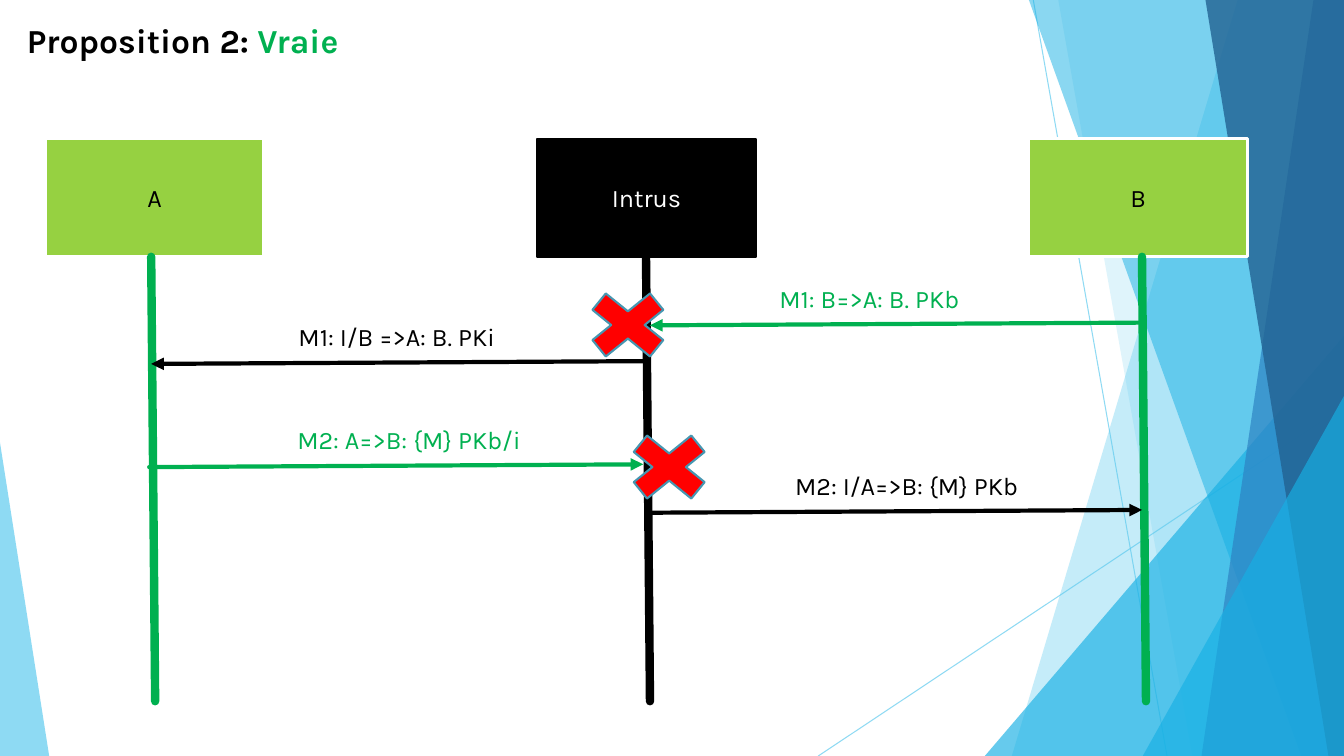
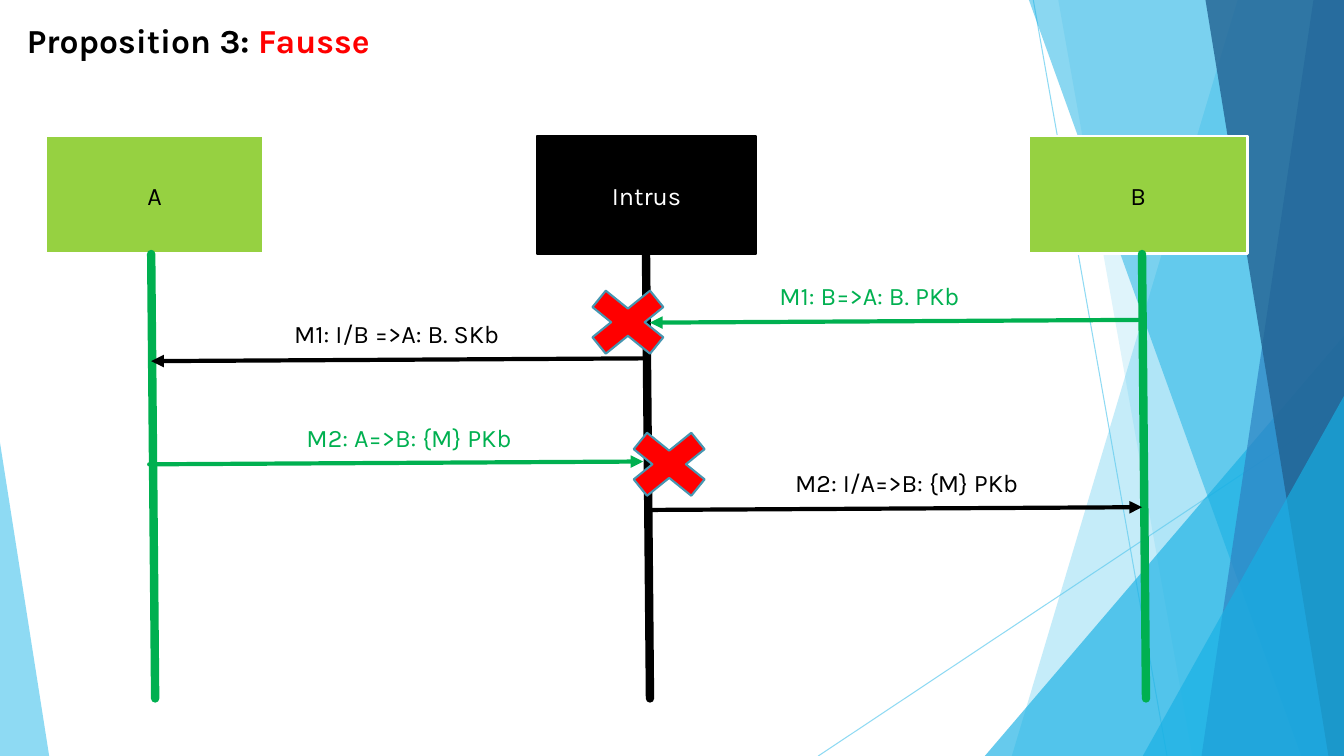
from lxml import etree
from pptx import Presentation
from pptx.dml.color import RGBColor
from pptx.enum.shapes import MSO_CONNECTOR, MSO_SHAPE
from pptx.enum.text import MSO_ANCHOR, PP_ALIGN
from pptx.oxml.ns import qn
from pptx.util import Cm, Pt

STRAIGHT = MSO_CONNECTOR.STRAIGHT
RECTANGLE, TRIANGLE, CROSS = MSO_SHAPE.RECTANGLE, MSO_SHAPE.ISOSCELES_TRIANGLE, MSO_SHAPE.MATH_MULTIPLY
MIDDLE, CENTER = MSO_ANCHOR.MIDDLE, PP_ALIGN.CENTER

FONT = "Karla"
COLORS = {
    "black": "000000", "white": "FFFFFF", "lime": "96D141", "green": "00B050",
    "red": "FF0000", "teal": "4696B1", "sky": "5FCBEF", "cyan": "17B0E4",
    "blue": "2E83C3", "navy": "226292",
}

# Content: verdict, top of the diagram and the four message labels
SLIDES = [
    {"title": "Proposition 2: ", "verdict": ("Vraie", "green"), "top": 3.5,
     "labels": ["M1: B=>A: B. PKb", "M1: I/B =>A: B. PKi",
                "M2: A=>B: {M} PKb/i", "M2: I/A=>B: {M} PKb"]},
    {"title": "Proposition 3: ", "verdict": ("Fausse", "red"), "top": 3.43,
     "labels": ["M1: B=>A: B. PKb", "M1: I/B =>A: B. SKb",
                "M2: A=>B: {M} PKb", "M2: I/A=>B: {M} PKb"]},
]

# Name, box left, lifeline x, box fill, text, border, border width, lifeline colour
ACTORS = [
    ("A", 1.14, 3.81, "lime", "black", "white", 2, "green"),
    ("B", 25.93, 28.78, "lime", "black", "white", 2, "green"),
    ("Intrus", 13.54, 16.28, "black", "white", "black", 1.5, "black"),
]

# Colour, left end (x, y below top), points left?, label centre, cross (x, y below top)
MESSAGES = [
    ("green", 16.38, 4.70, True, 21.91, (14.43, 3.56)),
    ("black", 3.81, 5.67, True, 10.0, None),
    ("green", 3.76, 8.27, False, 10.31, (15.47, 7.14)),
    ("black", 16.33, 9.42, False, 22.85, None),
]

# Sizes in centimetres
WIDTH, HEIGHT = 33.87, 19.05
BOX_W, BOX_H = 5.51, 2.97
LIFE_H, LIFE_LEAN = 11.2, 0.1
ARROW_W, ARROW_RISE = 12.45, 0.07
LABEL_W, LABEL_H, LABEL_LIFT = 7.24, 1.37, 1.37
CROSS_W, CROSS_H = 2.79, 2.26

# Backdrop, from back to front
RAYS = [(26.04, 0, 29.41, HEIGHT), (WIDTH, 10.24, 20.62, HEIGHT)]
FACETS = [  # bands: top x, bottom x; triangles: left, top, width, apex
    ("band", (31.19, 25.5), "sky", 36),
    ("band", (26.67, 30.05), "sky", 20),
    ("triangle", (24.82, 8.46, 9.05, 1), "cyan", 66),
    ("band", (25.93, 32.79), "cyan", 50),
    ("band", (33.1, 30.28), "blue", 70),
    ("band", (30.38, 33.48), "navy", 80),
    ("triangle", (28.8, 9.98, 5.07, 1), "cyan", 66),
    ("triangle", (0, 11.15, 1.24, 0), "sky", 70),
]


def rgb(name):
    return RGBColor.from_string(COLORS[name])


def set_opacity(shape, percent):
    for color in shape.element.iter(qn("a:srgbClr")):
        etree.SubElement(color, qn("a:alpha"), val=str(percent * 1000))


def style_shape(shape, fill, border=None, width=0):
    shape.shadow.inherit = False
    shape.fill.solid()
    shape.fill.fore_color.rgb = rgb(fill)
    if border:
        shape.line.color.rgb = rgb(border)
        shape.line.width = Pt(width)
    else:
        shape.line.fill.background()


def add_preset(page, kind, left, top, width, height, *style):
    shape = page.shapes.add_shape(kind, Cm(left), Cm(top), Cm(width), Cm(height))
    style_shape(shape, *style)
    return shape


def add_line(page, x1, y1, x2, y2, color, width, arrow=False):
    line = page.shapes.add_connector(STRAIGHT, Cm(x1), Cm(y1), Cm(x2), Cm(y2))
    line.line.color.rgb = rgb(color)
    line.line.width = Pt(width)
    outline = line.element.spPr.find(qn("a:ln"))
    outline.set("cap", "rnd")
    if arrow:
        etree.SubElement(outline, qn("a:tailEnd"), type="triangle")
    etree.SubElement(line.element.spPr, qn("a:effectLst"))
    return line


def write_centered(box, text, color):
    frame = box.text_frame
    frame.word_wrap = True
    frame.vertical_anchor = MIDDLE
    para = frame.paragraphs[0]
    para.text = text
    para.alignment = CENTER
    para.font.name, para.font.size = FONT, Pt(18)
    para.font.color.rgb = rgb(color)


def add_backdrop(page):
    for ray in RAYS:
        set_opacity(add_line(page, *ray, "sky", 0.75), 70)
    for kind, place, color, opacity in FACETS:
        if kind == "band":
            top_x, bottom_x = place
            outline = page.shapes.build_freeform(Cm(top_x), 0)
            outline.add_line_segments([(Cm(WIDTH), 0), (Cm(WIDTH), Cm(HEIGHT)),
                                       (Cm(bottom_x), Cm(HEIGHT))])
            facet = outline.convert_to_shape()
            style_shape(facet, color)
        else:
            left, top, width, apex = place
            facet = add_preset(page, TRIANGLE, left, top, width, HEIGHT - top, color)
            facet.adjustments[0] = apex
        set_opacity(facet, opacity)


def move_to_layout(page):
    """Make the shapes of a page part of its layout."""
    layout = page.slide_layout
    for holder in list(layout.placeholders):
        layout.shapes.element.remove(holder.element)
    for shape in list(page.shapes):
        layout.shapes.element.append(shape.element)


def add_title(page, title, verdict, color):
    box = page.shapes.add_textbox(Cm(0.43), Cm(0.38), Cm(11.05), Cm(1.27))
    box.text_frame.word_wrap = True
    para = box.text_frame.paragraphs[0]
    para.font.name, para.font.size, para.font.bold = FONT, Pt(24), True
    for text, tone in ((title, "black"), (verdict, color)):
        span = para.add_run()
        span.text = text
        span.font.color.rgb = rgb(tone)


def add_actors(page, top):
    for name, left, _, fill, ink, border, width, _ in ACTORS:
        box = add_preset(page, RECTANGLE, left, top, BOX_W, BOX_H, fill, border, width)
        write_centered(box, name, ink)
    foot = top + BOX_H
    for _, _, x, _, _, _, _, color in ACTORS:
        add_line(page, x, foot, x + LIFE_LEAN, foot + LIFE_H, color, 6)


def add_messages(page, top, labels):
    for label, (color, x, drop, leftward, center, cross) in zip(labels, MESSAGES):
        y = top + drop
        start, end = (x, y), (x + ARROW_W, y - ARROW_RISE)
        if leftward:
            start, end = end, start
        add_line(page, *start, *end, color, 3, arrow=True)
        box = page.shapes.add_textbox(Cm(center - LABEL_W / 2), Cm(y - LABEL_LIFT),
                                      Cm(LABEL_W), Cm(LABEL_H))
        write_centered(box, label, color)
        if cross:
            add_preset(page, CROSS, cross[0], top + cross[1], CROSS_W, CROSS_H,
                       "red", "teal", 1.5)


def main():
    deck = Presentation()
    deck.slide_width, deck.slide_height = Cm(WIDTH), Cm(HEIGHT)
    blank = deck.slide_layouts[6]
    for number, content in enumerate(SLIDES):
        page = deck.slides.add_slide(blank)
        if number == 0:
            add_backdrop(page)
            move_to_layout(page)
        add_actors(page, content["top"])
        add_messages(page, content["top"], content["labels"])
        add_title(page, content["title"], *content["verdict"])
    deck.save("out.pptx")


if __name__ == "__main__":
    main()
